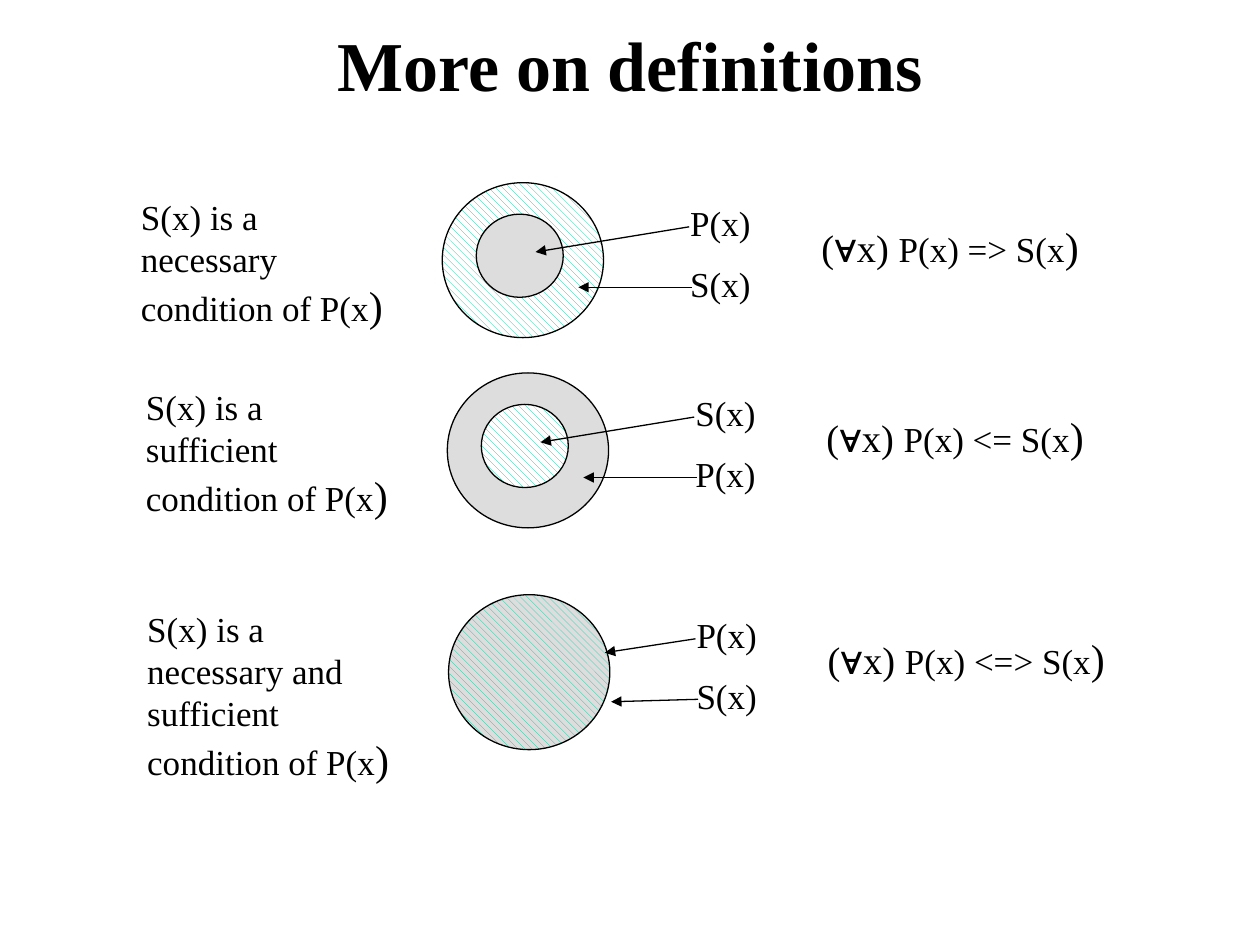
from lxml import etree
from pptx import Presentation
from pptx.dml.color import RGBColor
from pptx.enum.dml import MSO_PATTERN
from pptx.enum.shapes import MSO_CONNECTOR, MSO_SHAPE
from pptx.enum.text import MSO_ANCHOR, MSO_AUTO_SIZE, PP_ALIGN
from pptx.oxml.ns import qn
from pptx.util import Inches, Pt

STRIPES = MSO_PATTERN.WIDE_DOWNWARD_DIAGONAL
ELLIPSE = MSO_SHAPE.OVAL
STRAIGHT = MSO_CONNECTOR.STRAIGHT
CENTER, LEFT = PP_ALIGN.CENTER, PP_ALIGN.LEFT
MIDDLE, TOP = MSO_ANCHOR.MIDDLE, MSO_ANCHOR.TOP
GROW, FIXED = MSO_AUTO_SIZE.SHAPE_TO_FIT_TEXT, MSO_AUTO_SIZE.NONE

COLUMNS, ROWS = 100, 75
BLACK, WHITE, GREY, GREEN = "000000", "FFFFFF", "DDDDDD", "00CC99"
PLAIN = (GREY, None)
STRIPED = (WHITE, GREEN)
STRIPED_GREY = (GREY, GREEN)


def color(hex_value):
    return RGBColor.from_string(hex_value)


def apply(target, values):
    for name, value in values.items():
        setattr(target, name, value)


class DefinitionSlide:
    """Draws on one slide; lengths are columns and rows of its grid."""

    font = {"name": "Times New Roman"}
    line_width = Pt(0.75)
    paragraph_gap = Pt(11)

    def __init__(self, deck):
        self.slide = deck.slides.add_slide(deck.slide_layouts[6])
        self.column = deck.slide_width / COLUMNS
        self.row = deck.slide_height / ROWS

    def place(self, *lengths):
        """Turn alternating columns and rows into slide units."""
        units = (self.column, self.row)
        return [round(length * units[i % 2]) for i, length in enumerate(lengths)]

    def outline(self, line):
        line.color.rgb = color(BLACK)
        line.width = self.line_width

    def text(self, box, paragraphs, align=LEFT, anchor=TOP, fit=GROW, bold=False):
        """Add paragraphs, each a list of (wording, size) runs."""
        frame = self.slide.shapes.add_textbox(*self.place(*box)).text_frame
        apply(frame, {"word_wrap": True, "vertical_anchor": anchor, "auto_size": fit})
        for index, runs in enumerate(paragraphs):
            paragraph = frame.add_paragraph() if index else frame.paragraphs[0]
            paragraph.alignment = align
            if index:
                paragraph.space_before = self.paragraph_gap
            for wording, size in runs:
                run = paragraph.add_run()
                run.text = wording
                apply(run.font, {**self.font, "size": Pt(size), "bold": bold})
                run.font.color.rgb = color(BLACK)

    def circle(self, box, ground, stripe):
        circle = self.slide.shapes.add_shape(ELLIPSE, *self.place(*box))
        circle.shadow.inherit = False
        if stripe:
            circle.fill.patterned()
            circle.fill.pattern = STRIPES
            circle.fill.fore_color.rgb = color(stripe)
            circle.fill.back_color.rgb = color(ground)
        else:
            circle.fill.solid()
            circle.fill.fore_color.rgb = color(ground)
        self.outline(circle.line)

    def arrow(self, start, end):
        arrow = self.slide.shapes.add_connector(
            STRAIGHT, *self.place(*start), *self.place(*end))
        self.outline(arrow.line)
        properties = arrow._element.spPr
        etree.SubElement(properties.find(qn("a:ln")), qn("a:tailEnd"), type="triangle")
        etree.SubElement(properties, qn("a:effectLst"))

    def definition(self, x, y, condition, relation, labels, outer, inner, tips, formula_width):
        """Draw one definition; x, y is the corner of its outer circle."""
        self.circle((x, y, 12.8, 12.3), *outer)
        if inner:
            self.circle((x + 2.7, y + 2.5, 6.9, 6.6), *inner)
        self.text((x + 18.7, y + 1, 10.3, 9.3), [[(label, 20)] for label in labels])
        for (start_x, start_y), (tip_x, tip_y) in zip(LABEL_EDGES, tips):
            self.arrow((x + start_x, y + start_y), (x + tip_x, y + tip_y))
        self.text((x - 24.9, y + 0.5, 21.2, 11.7),
                  [[(f"S(x) is a {condition} condition of P(x", 20), (")", 24)]])
        self.text((x + 29.1, y + 2.5, formula_width, 5),
                  [[("(∀x) ", 22), (f"P(x) {relation} S(x", 20), (")", 24)]])


LABEL_EDGES = [(19.6, 3.5), (19.8, 8.3)]
NESTED_TIPS = [(7.4, 5.5), (10.8, 8.3)]
EDGE_TIPS = [(12.4, 4.6), (12.9, 8.5)]

DEFINITIONS = [
    (35.1, 14.5, "necessary", "=>", ("P(x)", "S(x)"), STRIPED, PLAIN, NESTED_TIPS, 25.5),
    (35.5, 29.6, "sufficient", "<=", ("S(x)", "P(x)"), PLAIN, STRIPED, NESTED_TIPS, 24.5),
    (35.6, 47.2, "necessary and sufficient", "<=>", ("P(x)", "S(x)"),
     STRIPED_GREY, None, EDGE_TIPS, 25.2),
]


def main():
    deck = Presentation()
    deck.slide_width, deck.slide_height = Inches(10), Inches(7.5)
    page = DefinitionSlide(deck)
    page.text((7.5, 1.7, 85, 6.7), [[("More on definitions", 40)]],
              align=CENTER, anchor=MIDDLE, fit=FIXED, bold=True)
    for definition in DEFINITIONS:
        page.definition(*definition)
    deck.save("out.pptx")


if __name__ == "__main__":
    main()
